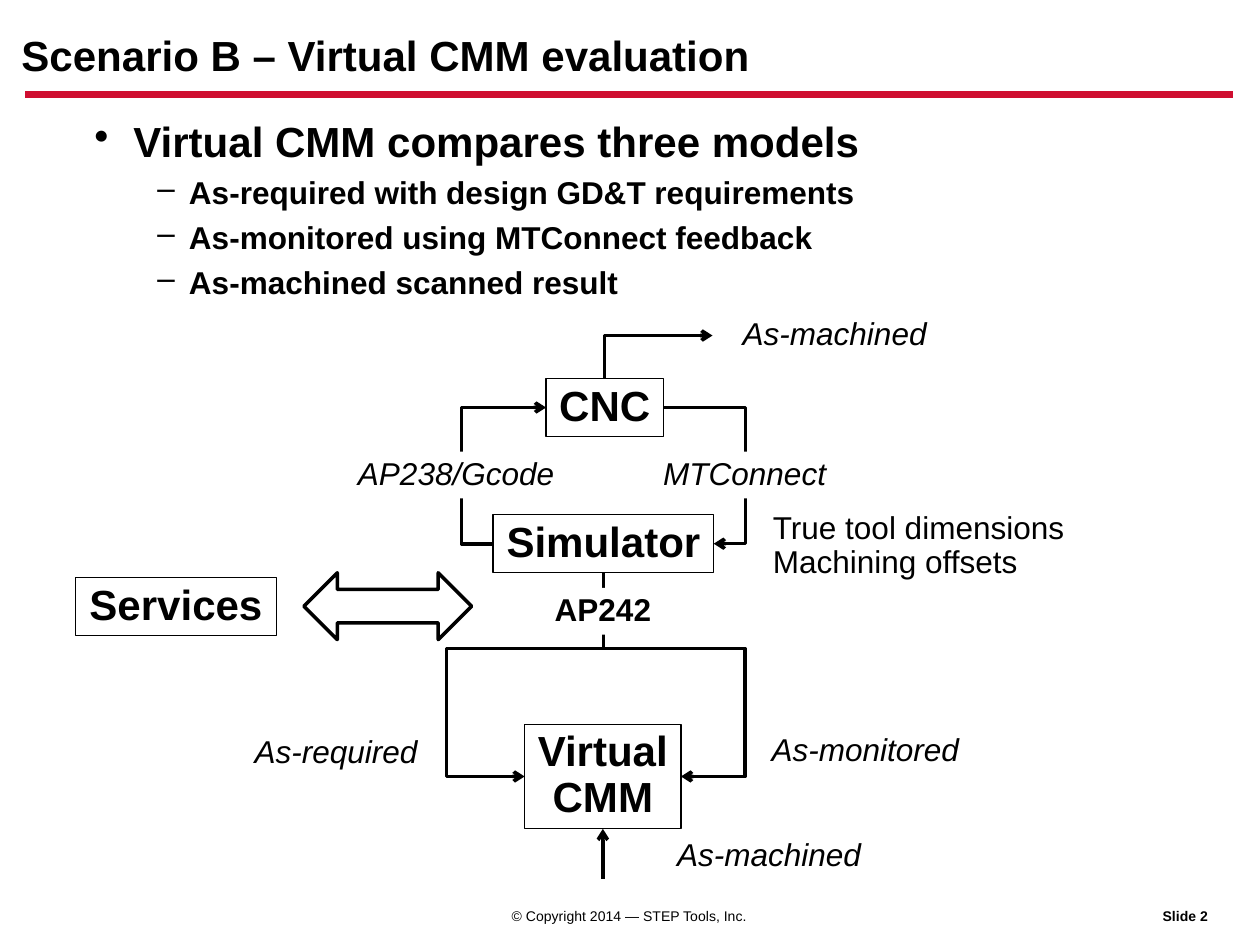
from dataclasses import dataclass
from typing import Optional, Union

from lxml.etree import SubElement
from pptx import Presentation
from pptx.dml.color import RGBColor
from pptx.enum.shapes import MSO_CONNECTOR, MSO_SHAPE
from pptx.enum.text import MSO_ANCHOR, MSO_AUTO_SIZE, PP_ALIGN
from pptx.oxml.ns import qn
from pptx.shapes.autoshape import Shape
from pptx.shapes.connector import Connector
from pptx.slide import Slide
from pptx.text.text import TextFrame
from pptx.util import Pt

PX = 9144  # EMU per px, 100 px to the inch


@dataclass(frozen=True)
class Theme:
    font: str = "Arial"
    ink: RGBColor = RGBColor(0x00, 0x00, 0x00)
    paper: RGBColor = RGBColor(0xFF, 0xFF, 0xFF)
    rule: RGBColor = RGBColor(0xCF, 0x0E, 0x30)
    heading: float = 24
    label: float = 18
    footer: float = 8
    outline: float = 0.75
    flow: float = 2
    rule_width: float = 4
    line_spacing: float = 0.9
    bullet_gap: float = 6.2


THEME = Theme()


@dataclass(frozen=True)
class Box:
    """An outlined block of the diagram."""
    text: str
    left: int
    top: int
    width: int
    height: int


@dataclass(frozen=True)
class Label:
    text: str
    left: int
    top: int
    width: int
    height: int = 37
    size: float = THEME.label
    bold: bool = False
    italic: bool = False
    filled: bool = False
    align: PP_ALIGN = PP_ALIGN.LEFT


@dataclass(frozen=True)
class Glue:
    """The middle of a box side: 0 top, 1 left, 2 bottom, 3 right."""
    box: str
    side: int


@dataclass(frozen=True)
class Point:
    x: int
    y: int


@dataclass(frozen=True)
class Flow:
    """An arrow, described from its head back to its origin."""
    head: Union[Glue, Point]
    origin: Union[Glue, Point]
    preset: str
    via_x: Optional[int] = None
    via_y: Optional[int] = None


@dataclass(frozen=True)
class Bullet:
    text: str
    mark: str
    size: float
    level: int
    margin: int
    hanging: int


CNC, SIMULATOR, CMM, SERVICES = "CNC", "Simulator", "Virtual\nCMM", "Services"

BOXES = [
    Box(CNC, 433, 300, 93, 46),
    Box(SIMULATOR, 391, 408, 175, 46),
    Box(CMM, 416, 574, 124, 83),
    Box(SERVICES, 60, 458, 159, 46),
]
FLOWS = [
    Flow(Glue(CNC, 1), Glue(SIMULATOR, 1), "bentConnector3", via_x=366),
    Flow(Glue(SIMULATOR, 3), Glue(CNC, 3), "bentConnector3", via_x=591),
    Flow(Glue(CMM, 1), Glue(SIMULATOR, 2), "bentConnector4", via_x=354, via_y=514),
    Flow(Glue(CMM, 3), Glue(SIMULATOR, 2), "bentConnector4", via_x=591, via_y=514),
    Flow(Point(565, 266), Glue(CNC, 0), "bentConnector2"),
    Flow(Glue(CMM, 2), Point(478, 697), "line"),
]
LABELS = [
    Label("AP238/Gcode", 274, 358, 177, italic=True, filled=True),
    Label("AP242", 430, 466, 97, bold=True, filled=True),
    Label("MTConnect", 516, 358, 151, italic=True, filled=True),
    Label("As-required", 192, 579, 151, italic=True),
    Label("As-monitored", 602, 577, 170, italic=True),
    Label("True tool dimensions\nMachining offsets", 603, 401, 253, 65),
    Label("As-machined", 527, 660, 167, italic=True),
    Label("As-machined", 579, 247, 167, italic=True),
    Label("Slide 2", 912, 716, 63, 22, size=THEME.footer, bold=True),
    Label("© Copyright 2014 — STEP Tools, Inc.", 394, 716, 210, 22,
          size=THEME.footer, align=PP_ALIGN.CENTER),
]
BULLETS = [Bullet("Virtual CMM compares three models", "•", THEME.heading, 0, 31, 31)] + [
    Bullet(text, "–", THEME.label, 1, 75, 25)
    for text in ("As-required with design GD&T requirements",
                 "As-monitored using MTConnect feedback",
                 "As-machined scanned result")
]


def write(frame: TextFrame, text: str, *, size: float, bold: bool = False,
          italic: bool = False, align: PP_ALIGN = PP_ALIGN.LEFT) -> None:
    frame.word_wrap = False
    frame.auto_size = MSO_AUTO_SIZE.SHAPE_TO_FIT_TEXT
    frame.vertical_anchor = MSO_ANCHOR.TOP
    frame.text = text
    for para in frame.paragraphs:
        para.alignment = align
        para.line_spacing = THEME.line_spacing
        for span in para.runs:
            span.font.name = THEME.font
            span.font.size = Pt(size)
            span.font.bold = bold
            span.font.italic = italic
            span.font.color.rgb = THEME.ink


def place(shape: Shape, left: int, top: int, width: int, height: int) -> None:
    shape.left, shape.top = left * PX, top * PX
    shape.width, shape.height = width * PX, height * PX


def add_title(page: Slide, text: str) -> None:
    title = page.shapes.title
    place(title, 17, 28, 583, 36)
    frame = title.text_frame
    frame.margin_left = frame.margin_right = frame.margin_top = frame.margin_bottom = 0
    write(frame, text, size=THEME.heading, bold=True)


def add_bullets(page: Slide, bullets: list[Bullet]) -> None:
    frame = page.shapes.add_textbox(65 * PX, 91 * PX, 828 * PX, 155 * PX).text_frame
    write(frame, "\n".join(bullet.text for bullet in bullets), size=THEME.label, bold=True)
    frame.word_wrap = True
    for index, (para, bullet) in enumerate(zip(frame.paragraphs, bullets)):
        para.level = bullet.level
        properties = para._p.get_or_add_pPr()
        properties.set("marL", str(bullet.margin * PX))
        properties.set("indent", str(-bullet.hanging * PX))
        SubElement(properties, qn("a:buChar"), char=bullet.mark)
        if index:
            para.space_before = Pt(THEME.bullet_gap)
        para.runs[0].font.size = Pt(bullet.size)


def add_outline(page: Slide, kind: MSO_SHAPE, left: int, top: int, width: int,
                height: int, line_width: float) -> Shape:
    shape = page.shapes.add_shape(kind, left * PX, top * PX, width * PX, height * PX)
    shape.shadow.inherit = False
    shape.fill.background()
    shape.line.color.rgb = THEME.ink
    shape.line.width = Pt(line_width)
    return shape


def add_box(page: Slide, box: Box) -> Shape:
    shape = add_outline(page, MSO_SHAPE.RECTANGLE, box.left, box.top, box.width,
                        box.height, THEME.outline)
    write(shape.text_frame, box.text, size=THEME.heading, bold=True, align=PP_ALIGN.CENTER)
    return shape


def add_label(page: Slide, label: Label) -> None:
    shape = page.shapes.add_textbox(label.left * PX, label.top * PX,
                                    label.width * PX, label.height * PX)
    if label.filled:
        shape.fill.solid()
        shape.fill.fore_color.rgb = THEME.paper
    write(shape.text_frame, label.text, size=label.size, bold=label.bold,
          italic=label.italic, align=label.align)


def add_line(page: Slide, kind: MSO_CONNECTOR, start: Point, end: Point,
             color: RGBColor, width: float) -> Connector:
    line = page.shapes.add_connector(kind, start.x * PX, start.y * PX, end.x * PX, end.y * PX)
    line.line.color.rgb = color
    line.line.width = Pt(width)
    SubElement(line.element.spPr, qn("a:effectLst"))
    return line


def add_flow(page: Slide, flow: Flow, shapes: dict[str, Shape]) -> None:
    kind = MSO_CONNECTOR.STRAIGHT if flow.preset == "line" else MSO_CONNECTOR.ELBOW
    start, end = (spot if isinstance(spot, Point) else Point(0, 0)
                  for spot in (flow.head, flow.origin))
    line = add_line(page, kind, start, end, THEME.ink, THEME.flow)
    if isinstance(flow.head, Glue):
        line.begin_connect(shapes[flow.head.box], flow.head.side)
    if isinstance(flow.origin, Glue):
        line.end_connect(shapes[flow.origin.box], flow.origin.side)
    properties = line.element.spPr
    SubElement(properties.find(qn("a:ln")), qn("a:headEnd"), type="arrow")
    geometry = properties.find(qn("a:prstGeom"))
    geometry.set("prst", flow.preset)
    guides = geometry.find(qn("a:avLst"))
    bends = ((flow.via_x, line.begin_x, line.end_x), (flow.via_y, line.begin_y, line.end_y))
    for number, (via, first, last) in enumerate(bends, start=1):
        if via is not None:
            share = round((via * PX - first) / (last - first) * 100000)
            SubElement(guides, qn("a:gd"), name=f"adj{number}", fmla=f"val {share}")


def main() -> None:
    deck = Presentation()
    deck.slide_width, deck.slide_height = 999 * PX, 749 * PX
    page = deck.slides.add_slide(deck.slide_layouts[5])
    add_title(page, "Scenario B – Virtual CMM evaluation")
    add_line(page, MSO_CONNECTOR.STRAIGHT, Point(20, 75), Point(978, 75),
             THEME.rule, THEME.rule_width)
    add_bullets(page, BULLETS)
    shapes = {box.text: add_box(page, box) for box in BOXES}
    for flow in FLOWS:
        add_flow(page, flow, shapes)
    for label in LABELS:
        add_label(page, label)
    add_outline(page, MSO_SHAPE.LEFT_RIGHT_ARROW, 241, 454, 133, 53, THEME.flow)
    deck.save("out.pptx")


if __name__ == "__main__":
    main()
